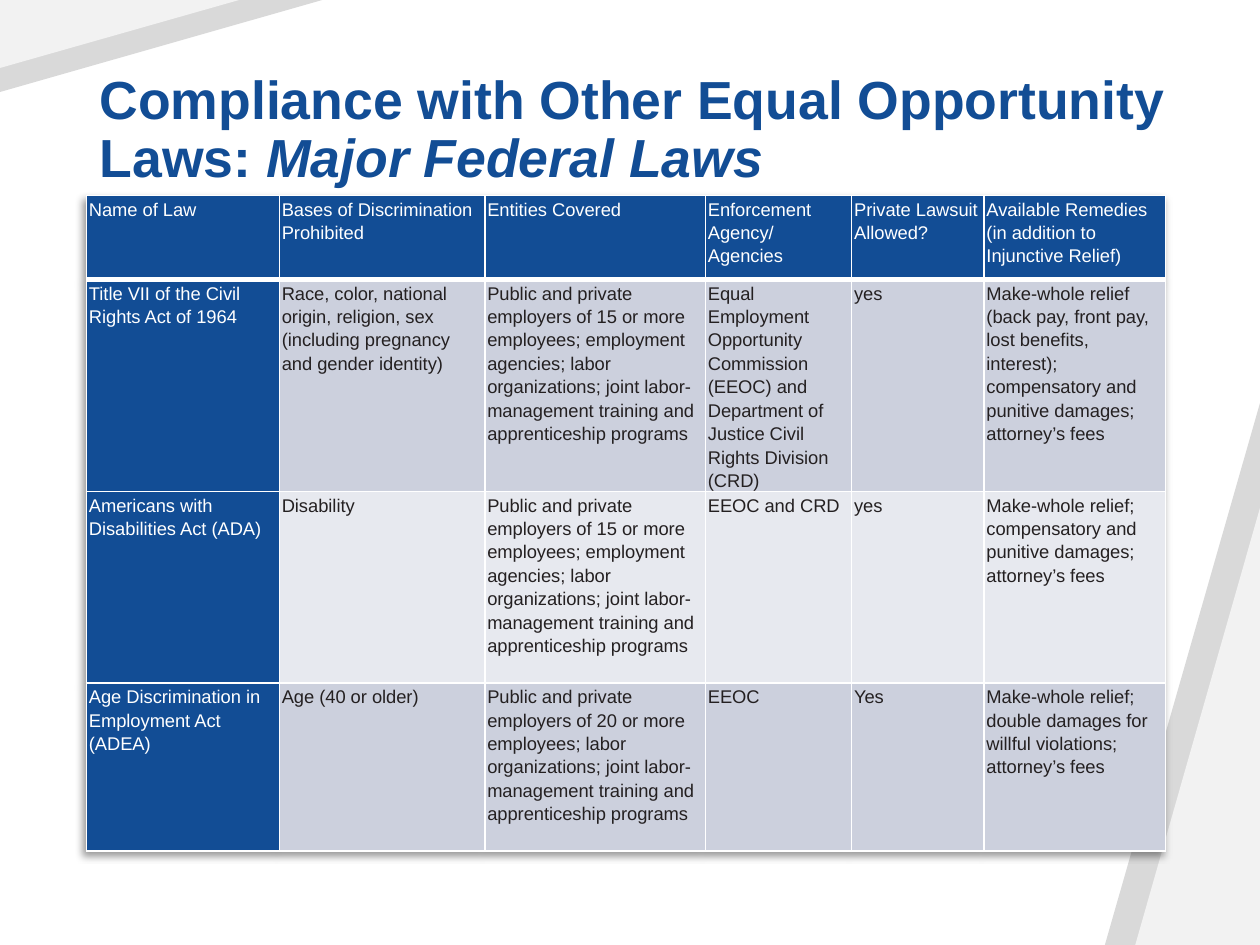
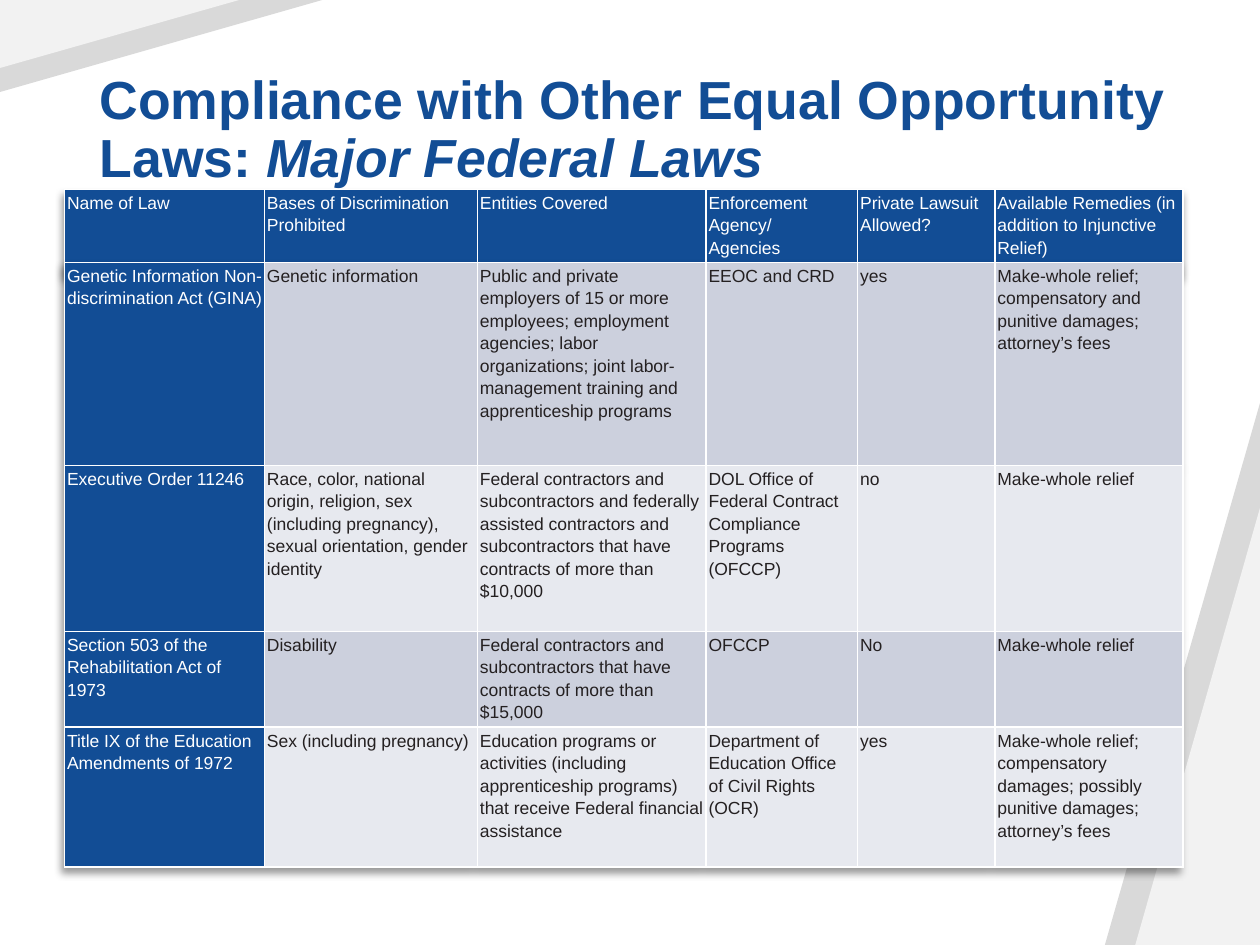
from lxml import etree
from pptx import Presentation
from pptx.dml.color import RGBColor
from pptx.enum import shapes, text
from pptx.oxml import ns
from pptx.util import Pt

FONT = "Arial"
BLUE, WHITE, INK = "124D95", "FFFFFF", "242021"
BANDS = ["CCD0DD", "E7E9EF"]
DARK_GREY, LIGHT_GREY = "D9D9D9", "F2F2F2"
SLIDE_WIDTH, SLIDE_HEIGHT = 720, 540
TITLE_BOX = (49.7, 28.8, 626.4, 82.8)
COLUMN_SHARES = [1.53, 1.63, 1.75, 1.16, 1.05, 1.44]

HEADERS = ["Name of Law", "Bases of Discrimination Prohibited", "Entities Covered",
           "Enforcement Agency/\nAgencies", "Private Lawsuit Allowed?",
           "Available Remedies (in addition to Injunctive Relief)"]
PROGRAMS = "labor organizations; joint labor-management training and apprenticeship programs"
EMPLOYERS_OF_15 = ("Public and private employers of 15 or more employees; "
                   "employment agencies; " + PROGRAMS)
FULL_REMEDIES = "Make-whole relief; compensatory and punitive damages; attorney’s fees"

FIRST_LAWS = [
    ["Title VII of the Civil Rights Act of 1964",
     "Race, color, national origin, religion, sex (including pregnancy and gender identity)",
     EMPLOYERS_OF_15,
     "Equal Employment Opportunity Commission (EEOC) and Department of Justice "
     "Civil Rights Division (CRD)",
     "yes",
     "Make-whole relief (back pay, front pay, lost benefits, interest); "
     "compensatory and punitive damages; attorney’s fees"],
    ["Americans with Disabilities Act (ADA)", "Disability", EMPLOYERS_OF_15,
     "EEOC and CRD", "yes", FULL_REMEDIES],
    ["Age Discrimination in Employment Act (ADEA)", "Age (40 or older)",
     "Public and private employers of 20 or more employees; " + PROGRAMS,
     "EEOC", "Yes",
     "Make-whole relief; double damages for willful violations; attorney’s fees"],
]
MORE_LAWS = [
    ["Genetic Information Non-discrimination Act (GINA)", "Genetic information",
     EMPLOYERS_OF_15, "EEOC and CRD", "yes", FULL_REMEDIES],
    ["Executive Order 11246",
     "Race, color, national origin, religion, sex (including pregnancy), "
     "sexual orientation, gender identity",
     "Federal contractors and subcontractors and federally assisted contractors and "
     "subcontractors that have contracts of more than $10,000",
     "DOL Office of Federal Contract Compliance Programs (OFCCP)", "no",
     "Make-whole relief"],
    ["Section 503 of the Rehabilitation Act of 1973", "Disability",
     "Federal contractors and subcontractors that have contracts of more than $15,000",
     "OFCCP", "No", "Make-whole relief"],
    ["Title IX of the Education Amendments of 1972", "Sex (including pregnancy)",
     "Education programs or activities (including apprenticeship programs) "
     "that receive Federal financial assistance",
     "Department of Education Office of Civil Rights (OCR)", "yes",
     "Make-whole relief; compensatory damages; possibly punitive damages; attorney’s fees"],
]


def color(value):
    return RGBColor.from_string(value)


def add_element(parent, tag, **attributes):
    return etree.SubElement(parent, ns.qn(tag), attributes)


def add_corner_triangle(slide, width, height, fill, at_top_left):
    left, top = SLIDE_WIDTH - width, SLIDE_HEIGHT - height
    if at_top_left:
        left, top = (height - width) / 2, (width - height) / 2
    shape = slide.shapes.add_shape(shapes.MSO_SHAPE.ISOSCELES_TRIANGLE,
                                   Pt(left), Pt(top), Pt(width), Pt(height))
    shape.adjustments[0] = 1
    shape.shadow.inherit = False
    shape.fill.solid()
    shape.fill.fore_color.rgb = color(fill)
    shape.line.fill.background()
    if at_top_left:
        shape.rotation = 270
        shape._element.spPr.find(ns.qn("a:xfrm")).set("flipV", "1")
    return shape


def decorate_layout(layout, slide):
    triangles = [(88.6, 309.6, DARK_GREY, False), (71.3, 249.8, LIGHT_GREY, False),
                 (52.6, 184.3, DARK_GREY, True), (38.9, 136.8, LIGHT_GREY, True)]
    for position, triangle in enumerate(triangles, start=2):
        shape = add_corner_triangle(slide, *triangle)
        layout.shapes._spTree.insert(position, shape._element)


def add_title(slide):
    title = slide.shapes.title
    title.left, title.top, title.width, title.height = map(Pt, TITLE_BOX)
    frame = title.text_frame
    frame.word_wrap = True
    frame.auto_size = text.MSO_AUTO_SIZE.NONE
    frame.vertical_anchor = text.MSO_ANCHOR.BOTTOM
    paragraph = frame.paragraphs[0]
    paragraph.alignment = text.PP_ALIGN.LEFT
    paragraph.line_spacing = 0.9
    paragraph.font.name = FONT
    paragraph.font.size = Pt(30.6)
    paragraph.font.bold = True
    paragraph.font.color.rgb = color(BLUE)
    paragraph.add_run().text = "Compliance with Other Equal Opportunity Laws: "
    emphasis = paragraph.add_run()
    emphasis.text = "Major Federal Laws"
    emphasis.font.italic = True


def add_borders(cell, bottom):
    properties = cell._tc.get_or_add_tcPr()
    for side, width in [("L", 1), ("R", 1), ("T", 1), ("B", bottom)]:
        line = add_element(properties, f"a:ln{side}", w=str(Pt(width)))
        add_element(add_element(line, "a:solidFill"), "a:srgbClr", val=WHITE)


def add_table_shadow(table):
    effects = etree.Element(ns.qn("a:effectLst"))
    table._tbl.tblPr.insert(0, effects)
    shadow = add_element(effects, "a:outerShdw", blurRad=str(Pt(4)), dist=str(Pt(3)),
                         dir="7200000", algn="tr", rotWithShape="0")
    add_element(add_element(shadow, "a:srgbClr", val="000000"), "a:alpha", val="40000")


def format_cell(cell, content, size, fill, ink, bottom_border):
    cell.margin_left = cell.margin_right = Pt(1.44)
    cell.margin_top, cell.margin_bottom = Pt(0.72), Pt(0)
    add_borders(cell, bottom_border)
    cell.fill.solid()
    cell.fill.fore_color.rgb = color(fill)
    cell.text = content
    for paragraph in cell.text_frame.paragraphs:
        paragraph.line_spacing = 1.15
        paragraph.font.name = FONT
        paragraph.font.size = Pt(size)
        paragraph.font.bold = False
        paragraph.font.color.rgb = color(ink)


def add_law_table(slide, left, top, width, row_heights, rows, size):
    has_header = rows[0] is HEADERS
    frame = slide.shapes.add_table(len(rows), len(HEADERS), Pt(left), Pt(top),
                                   Pt(width), Pt(sum(row_heights)))
    table = frame.table
    table.first_row = has_header
    table.first_col = True
    add_table_shadow(table)
    for column, share in zip(table.columns, COLUMN_SHARES):
        column.width = Pt(width * share / sum(COLUMN_SHARES))
    for row_index, (row, height) in enumerate(zip(rows, row_heights)):
        table.rows[row_index].height = Pt(height)
        is_header = has_header and row_index == 0
        band = BANDS[(row_index - has_header) % 2]
        for column_index, content in enumerate(row):
            on_blue = is_header or column_index == 0
            format_cell(table.cell(row_index, column_index), content, size,
                        BLUE if on_blue else band, WHITE if on_blue else INK,
                        3 if is_header else 1)


def main():
    presentation = Presentation()
    presentation.slide_width, presentation.slide_height = Pt(SLIDE_WIDTH), Pt(SLIDE_HEIGHT)
    layout = presentation.slide_layouts.get_by_name("Title Only")
    first_slide, second_slide = [presentation.slides.add_slide(layout) for _ in range(2)]
    decorate_layout(layout, first_slide)
    for slide in (first_slide, second_slide):
        add_title(slide)

    add_law_table(first_slide, 49.4, 111.6, 616.7, [48, 109.5, 109.5, 96],
                  [HEADERS] + FIRST_LAWS, 10.5)
    add_law_table(second_slide, 36.9, 108.3, 639.2, [47.5], [HEADERS], 10)
    add_law_table(second_slide, 36.9, 149.9, 639.2, [116, 95, 54.7, 80],
                  MORE_LAWS, 10)
    presentation.save("out.pptx")


if __name__ == "__main__":
    main()
